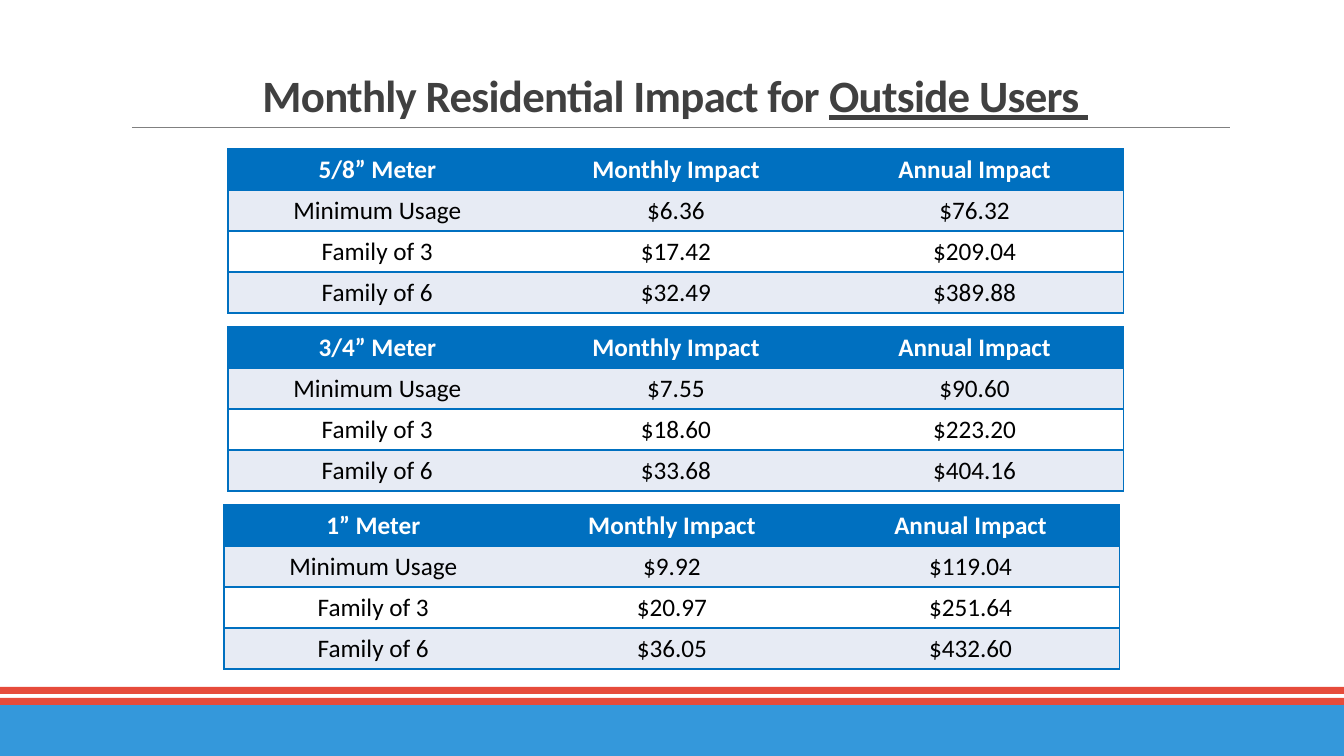
from lxml import etree
from pptx import Presentation
from pptx.dml.color import RGBColor
from pptx.enum.shapes import MSO_CONNECTOR, MSO_SHAPE
from pptx.enum.text import MSO_ANCHOR, PP_ALIGN
from pptx.oxml.ns import qn
from pptx.util import Emu, Pt

SLIDE_WIDTH, SLIDE_HEIGHT = 1344, 756
EMU_PER_PX = 12192000 / SLIDE_WIDTH
FONT = "Calibri"
WHITE = RGBColor(0xFF, 0xFF, 0xFF)
BLACK = RGBColor(0, 0, 0)
TITLE_GRAY = RGBColor(0x40, 0x40, 0x40)
RULE_GRAY = RGBColor(0x80, 0x80, 0x80)
FOOTER_BLUE = RGBColor(0x34, 0x98, 0xDB)
STRIPE_RED = RGBColor(0xE6, 0x4B, 0x3B)
TABLE_BLUE = RGBColor(0x00, 0x70, 0xC0)
BAND_GRAY = RGBColor(0xE7, 0xEB, 0xF4)

TABLE_WIDTH, ROW_HEIGHT = 896, 41
IMPACT_HEADINGS = ("Monthly Impact", "Annual Impact")
USAGE_LEVELS = ("Minimum Usage", "Family of 3", "Family of 6")
METERS = (
    (228, 149, "5/8” Meter",
     (("$6.36", "$76.32"), ("$17.42", "$209.04"), ("$32.49", "$389.88"))),
    (228, 327, "3/4” Meter",
     (("$7.55", "$90.60"), ("$18.60", "$223.20"), ("$33.68", "$404.16"))),
    (224, 505, "1” Meter",
     (("$9.92", "$119.04"), ("$20.97", "$251.64"), ("$36.05", "$432.60"))),
)


def px(*lengths):
    """Turn pixel lengths into a list of EMU lengths."""
    return [Emu(round(length * EMU_PER_PX)) for length in lengths]


def style_run(run, size, color, bold):
    """Give a run its font, size, colour and weight."""
    run.font.name = FONT
    run.font.size = Pt(size)
    run.font.color.rgb = color
    run.font.bold = bold


def add_bar(slide, left, top, width, height, color):
    """Add one plain filled bar."""
    bar = slide.shapes.add_shape(MSO_SHAPE.RECTANGLE, *px(left, top, width, height))
    bar.shadow.inherit = False
    bar.fill.solid()
    bar.fill.fore_color.rgb = color
    bar.line.fill.background()


def add_footer(slide, left, top, width, height):
    """Add two red stripes above a blue band that fills the rest of the box."""
    stripe, pitch, band_offset = 7, 11, 18
    add_bar(slide, left, top + band_offset, width, height - band_offset, FOOTER_BLUE)
    for index in range(2):
        add_bar(slide, left, top + index * pitch, width, stripe, STRIPE_RED)


def add_title(slide, left, top, width, height):
    """Add the bottom-anchored heading and the thin rule under it."""
    bottom = top + height
    rule = slide.shapes.add_connector(
        MSO_CONNECTOR.STRAIGHT, *px(left + 11, bottom, left + width, bottom))
    rule.line.color.rgb = RULE_GRAY
    rule.line.width = Pt(0.5)
    etree.SubElement(rule._element.spPr, qn("a:effectLst"))

    title = slide.shapes.add_textbox(*px(left, top, width, height))
    frame = title.text_frame
    frame.word_wrap = True
    frame.vertical_anchor = MSO_ANCHOR.BOTTOM
    paragraph = frame.paragraphs[0]
    paragraph.alignment = PP_ALIGN.CENTER
    paragraph.line_spacing = 0.85
    for text, underlined in (("Monthly Residential Impact for ", False),
                             ("Outside Users ", True)):
        run = paragraph.add_run()
        run.text = text
        style_run(run, 32, TITLE_GRAY, True)
        run.font.underline = underlined
        run.font._element.set("spc", "-50")


def set_borders(cell, visible_sides):
    """Draw 1 pt blue borders on the visible sides and clear the others."""
    properties = cell._tc.get_or_add_tcPr()
    for side in "LRTB":
        line = etree.SubElement(properties, qn(f"a:ln{side}"), w=str(Pt(1)))
        if side in visible_sides:
            fill = etree.SubElement(line, qn("a:solidFill"))
            etree.SubElement(fill, qn("a:srgbClr"), val=str(TABLE_BLUE))
        else:
            etree.SubElement(line, qn("a:noFill"))


def add_meter_table(slide, left, top, width, meter, impacts):
    """Add the impact table of one meter size."""
    rows = [(meter, *IMPACT_HEADINGS)]
    rows += [(usage, *amounts) for usage, amounts in zip(USAGE_LEVELS, impacts)]
    table = slide.shapes.add_table(
        len(rows), len(rows[0]), *px(left, top, width, ROW_HEIGHT * len(rows))).table
    for row in table.rows:
        row.height = px(ROW_HEIGHT)[0]
    for row_index, texts in enumerate(rows):
        is_header = row_index == 0
        band = BAND_GRAY if row_index % 2 else WHITE
        for column_index, text in enumerate(texts):
            cell = table.cell(row_index, column_index)
            set_borders(cell, ("LTB", "TB", "RTB")[column_index])
            cell.fill.solid()
            cell.fill.fore_color.rgb = TABLE_BLUE if is_header else band
            paragraph = cell.text_frame.paragraphs[0]
            paragraph.text = text
            paragraph.alignment = PP_ALIGN.CENTER
            style_run(paragraph.runs[0], 18, WHITE if is_header else BLACK, is_header)


def main():
    """Build and save the slide."""
    presentation = Presentation()
    presentation.slide_width, presentation.slide_height = px(SLIDE_WIDTH, SLIDE_HEIGHT)
    slide = presentation.slides.add_slide(presentation.slide_layouts[6])
    add_footer(slide, 0, 687, SLIDE_WIDTH, 69)
    add_title(slide, 121, 31, 1109, 96)
    for left, top, meter, impacts in METERS:
        add_meter_table(slide, left, top, TABLE_WIDTH, meter, impacts)
    presentation.save("out.pptx")


if __name__ == "__main__":
    main()
